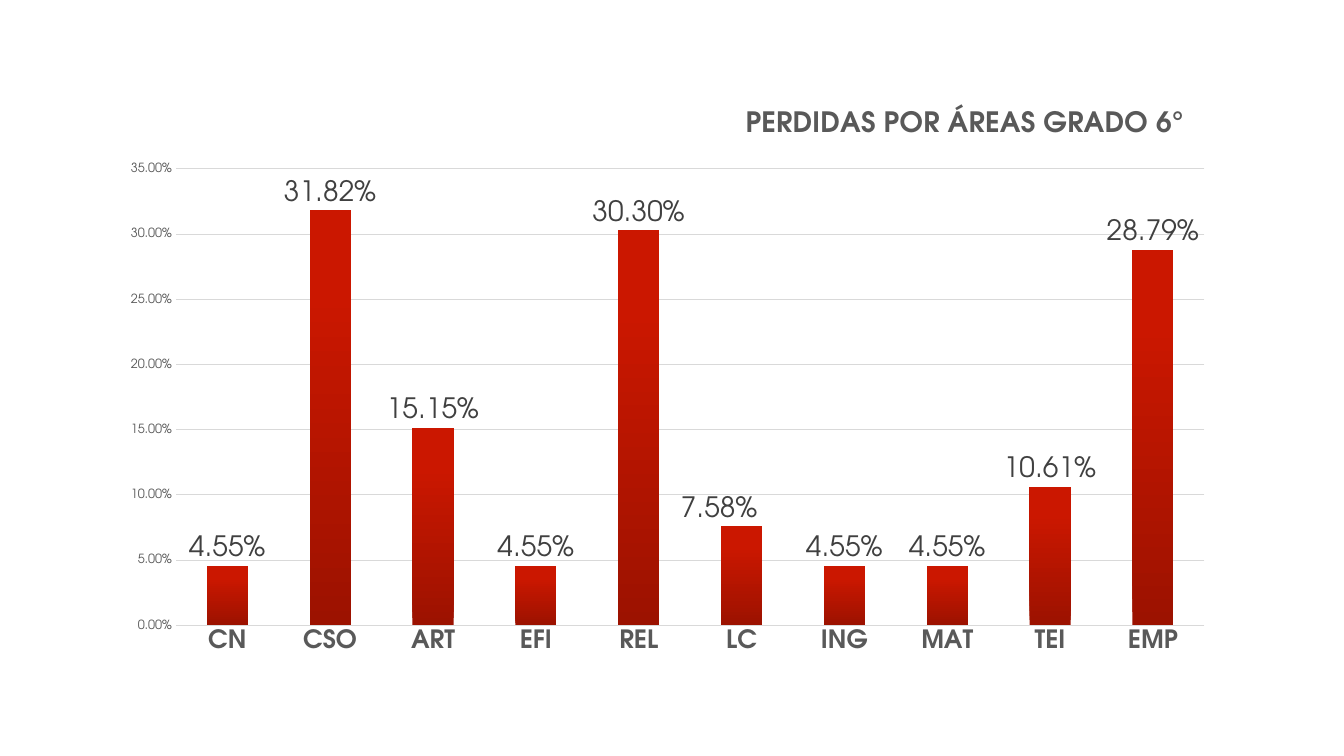
from dataclasses import dataclass

from lxml.etree import SubElement
from pptx import Presentation
from pptx.chart.data import CategoryChartData
from pptx.dml.color import RGBColor
from pptx.enum.chart import XL_CHART_TYPE as ChartType
from pptx.enum.chart import XL_LABEL_POSITION as LabelPosition
from pptx.enum.chart import XL_TICK_MARK as TickMark
from pptx.oxml.ns import qn
from pptx.util import Pt

LOSSES = {
    "CN": 0.0455, "CSO": 0.3182, "ART": 0.1515, "EFI": 0.0455, "REL": 0.3030,
    "LC": 0.0758, "ING": 0.0455, "MAT": 0.0455, "TEI": 0.1061, "EMP": 0.2879,
}


@dataclass(frozen=True)
class Theme:
    font: str = "TeX Gyre Adventor"
    black: str = "000000"
    heading: str = "595959"
    label: str = "404040"
    grid: str = "D9D9D9"
    bar_bottom: str = "9C1200"
    bar_top: str = "CB1700"
    base_size: int = 10
    tick_size: int = 9
    category_size: int = 18
    large_size: int = 20
    percent: str = "0.00%"


def place(parent, index, target=None, **fractions):
    """Give a chart part a manual layout, in fractions of the chart, at a child index."""
    for old in parent.findall(qn("c:layout")):
        parent.remove(old)
    layout = SubElement(parent, qn("c:layout"))
    parent.insert(index, layout)
    manual = SubElement(layout, qn("c:manualLayout"))
    settings = {"layoutTarget": target} if target else {}
    if target or parent.tag == qn("c:title"):
        settings.update(xMode="edge", yMode="edge")
    settings.update(fractions)
    for name, value in settings.items():
        SubElement(manual, qn(f"c:{name}")).set("val", str(value))


class SlideBuilder:
    def __init__(self, slide, theme):
        self.slide = slide
        self.theme = theme

    def style_font(self, font, size, color, bold=False):
        font.name = self.theme.font
        font.size = Pt(size)
        font.bold = bold
        font.color.rgb = RGBColor.from_string(color)

    def style_line(self, line, width):
        line.width = Pt(width)
        line.color.rgb = RGBColor.from_string(self.theme.grid)

    def column_chart(self, values, left, top, width, height):
        theme = self.theme
        data = CategoryChartData(number_format=theme.percent)
        data.categories = list(values)
        data.add_series("Series 1", list(values.values()))
        frame = self.slide.shapes.add_chart(
            ChartType.COLUMN_CLUSTERED, Pt(left), Pt(top), Pt(width), Pt(height), data)
        chart = frame.chart
        chart.has_legend = False
        self.style_font(chart.font, theme.base_size, theme.black)
        plot = chart.plots[0]
        plot.gap_width = 150
        plot.vary_by_categories = False
        plot_area = chart.element.find(".//" + qn("c:plotArea"))
        place(plot_area, 0, "inner", x=0.061, y=0.135, w=0.92, h=0.797)
        return chart

    def chart_title(self, chart, text):
        frame = chart.chart_title.text_frame
        frame.text = text
        self.style_font(frame.paragraphs[0].runs[0].font,
                        self.theme.large_size, self.theme.heading, bold=True)
        title = chart.element.find(".//" + qn("c:title"))
        place(title, 1, x=0.566, y=0.02)

    def axes(self, chart, maximum, step):
        theme = self.theme
        category, value = chart.category_axis, chart.value_axis
        for axis in (category, value):
            axis.major_tick_mark = axis.minor_tick_mark = TickMark.NONE
        self.style_font(category.tick_labels.font, theme.category_size, theme.heading, bold=True)
        self.style_line(category.format.line, 1)
        self.style_font(value.tick_labels.font, theme.tick_size, theme.heading)
        value.tick_labels.number_format = theme.percent
        value.tick_labels.number_format_is_linked = False
        value.minimum_scale, value.maximum_scale, value.major_unit = 0, maximum, step
        value.format.line.fill.background()
        value.has_major_gridlines = True
        self.style_line(value.major_gridlines.format.line, 0.75)

    def gradient_bars(self, series):
        fill = series.format.fill
        fill.gradient()
        fill.gradient_angle = 90
        colors = (self.theme.bar_bottom, self.theme.bar_top)
        for stop, color, position in zip(fill.gradient_stops, colors, (0, 0.8)):
            stop.color.rgb = RGBColor.from_string(color)
            stop.position = position

    def value_labels(self, series):
        theme = self.theme
        labels = series.data_labels
        labels.show_value = True
        labels.number_format = theme.percent
        labels.number_format_is_linked = False
        labels.position = LabelPosition.OUTSIDE_END
        self.style_font(labels.font, theme.large_size, theme.label)

    def shift_label(self, chart, series, index, x, y):
        label = series.points[index].data_label
        self.style_font(label.font, self.theme.large_size, self.theme.label)
        label.position = LabelPosition.OUTSIDE_END
        place(chart.element.find(".//" + qn("c:dLbl")), 1, x=x, y=y)


def main():
    deck = Presentation()
    deck.slide_width, deck.slide_height = Pt(960), Pt(540)
    page = SlideBuilder(deck.slides.add_slide(deck.slide_layouts[6]), Theme())

    chart = page.column_chart(LOSSES, 77, 65.5, 798.5, 409)
    page.chart_title(chart, "PERDIDAS POR ÁREAS GRADO 6°")
    page.axes(chart, maximum=0.35, step=0.05)
    series = chart.plots[0].series[0]
    page.gradient_bars(series)
    page.value_labels(series)
    page.shift_label(chart, series, list(LOSSES).index("LC"), x=-0.02, y=0)

    deck.save("out.pptx")


if __name__ == "__main__":
    main()
